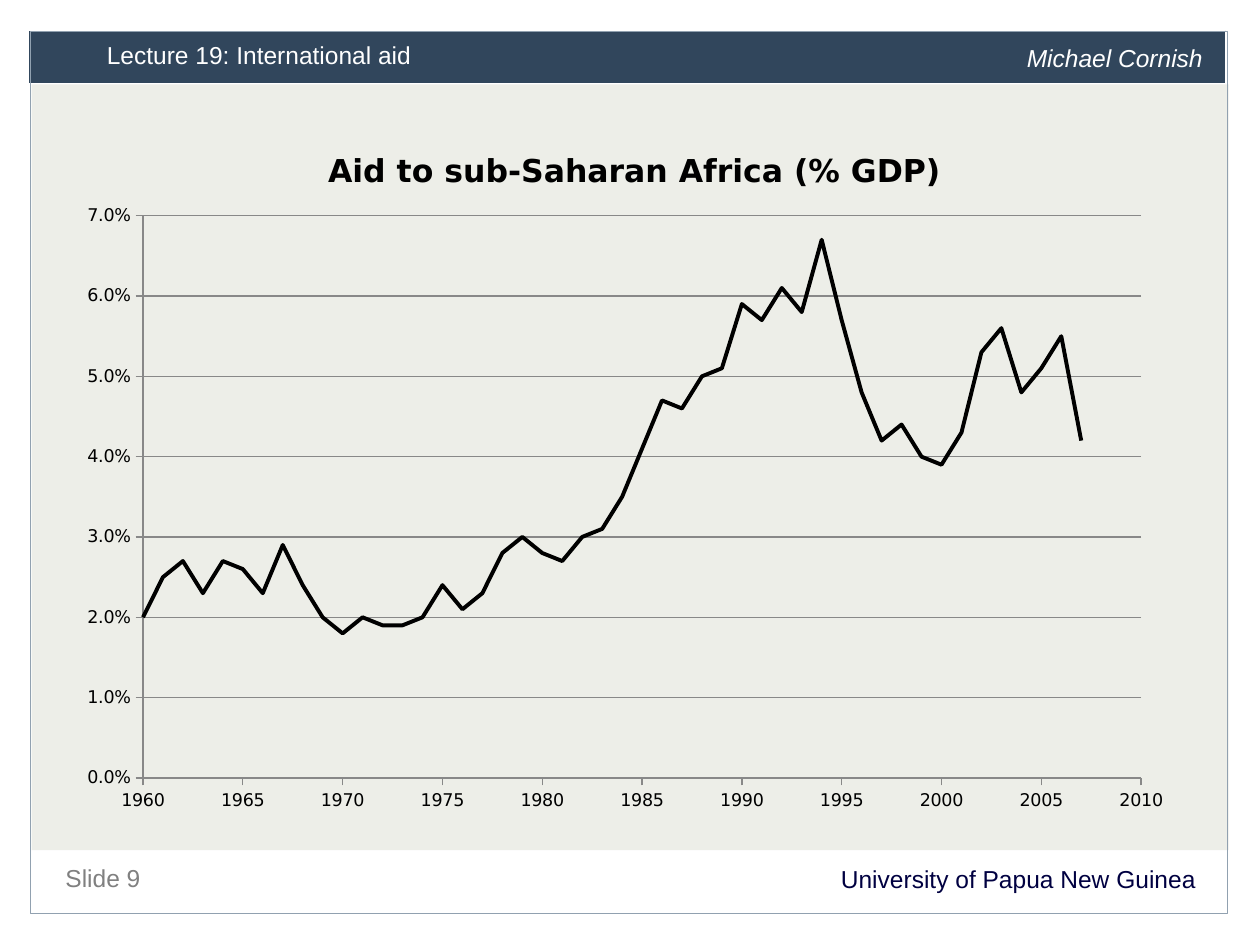
from lxml import etree
from pptx import Presentation
from pptx import util as u
from pptx.chart.data import XyChartData
from pptx.dml.color import RGBColor
from pptx.enum import chart as charts, shapes, text
from pptx.oxml import parse_xml
from pptx.oxml.ns import nsdecls

COLORS = {"panel": "EDEEE8", "band": "31465C", "frame": "91A1B0", "white": "FFFFFF",
          "navy": "000041", "grey": "808080", "grid": "888888", "black": "000000"}
COLORS = {name: RGBColor.from_string(value) for name, value in COLORS.items()}


def write_label(shape, wording, color, spacing, align=text.PP_ALIGN.LEFT, italic=False):
    frame = shape.text_frame
    frame.word_wrap = True
    frame.auto_size = text.MSO_AUTO_SIZE.NONE
    frame.vertical_anchor = text.MSO_ANCHOR.TOP
    paragraph = frame.paragraphs[0]
    paragraph.alignment = align
    paragraph.line_spacing = u.Pt(spacing)
    paragraph.space_before = u.Pt(0)
    run = paragraph.add_run()
    run.text = wording
    run.font.name, run.font.size = "Arial", u.Pt(14)
    run.font.italic = italic
    run.font.color.rgb = COLORS[color]


def place_inside(parent, position, inner=False, **fractions):
    """Give a chart title or plot area a manual layout."""
    for old in parent.findall("{*}layout"):
        parent.remove(old)
    target = '<c:layoutTarget val="inner"/>' if inner else ""
    modes = '<c:xMode val="edge"/><c:yMode val="edge"/>'
    values = "".join(f'<c:{key} val="{value}"/>' for key, value in fractions.items())
    parent.insert(position, parse_xml(
        f'<c:layout {nsdecls("c")}><c:manualLayout>{target}{modes}{values}'
        '</c:manualLayout></c:layout>'))


presentation = Presentation()
presentation.slide_width, presentation.slide_height = u.Cm(25.4), u.Cm(19.05)
slide = presentation.slides.add_slide(presentation.slide_layouts[5])

# Panel, header band and frame
for box, fill, line, width in [
    ((0.64, 1.7, 24.13, 15.44), "panel", None, 0),
    ((0.58, 0.61, 24.13, 1.07), "band", "white", 0.5),
    ((0.61, 0.64, 24.13, 17.78), None, "frame", 0.75),
]:
    shape = slide.shapes.add_shape(shapes.MSO_SHAPE.RECTANGLE, *map(u.Cm, box))
    shape.shadow.inherit = False
    if fill:
        shape.fill.solid()
        shape.fill.fore_color.rgb = COLORS[fill]
    else:
        shape.fill.background()
    if line:
        shape.line.color.rgb = COLORS[line]
        shape.line.width = u.Pt(width)
    else:
        shape.line.fill.background()

# Lecture title, brought in front of the band
title = slide.shapes.title
title.left, title.top, title.width, title.height = map(u.Cm, (1.9, 0.64, 15.57, 0.94))
write_label(title, "Lecture 19: International aid", "white", 18)
title.element.getparent().append(title.element)

# Lecturer and footer labels
for box, wording, color, spacing, align, italic in [
    ((20.45, 0.71, 4.17, 0.94), "Michael Cornish", "white", 18, text.PP_ALIGN.LEFT, True),
    ((1.07, 17.15, 11, 0.86), "Slide 9", "grey", 20, text.PP_ALIGN.LEFT, False),
    ((1.07, 17.35, 23.29, 0.81), "University of Papua New Guinea", "navy", 15,
     text.PP_ALIGN.RIGHT, False),
]:
    label = slide.shapes.add_textbox(*map(u.Cm, box))
    write_label(label, wording, color, spacing, align, italic)

# Aid as a share of GDP, yearly from 1960
aid_percent = [
    2.0, 2.5, 2.7, 2.3, 2.7, 2.6, 2.3, 2.9, 2.4, 2.0,
    1.8, 2.0, 1.9, 1.9, 2.0, 2.4, 2.1, 2.3, 2.8, 3.0,
    2.8, 2.7, 3.0, 3.1, 3.5, 4.1, 4.7, 4.6, 5.0, 5.1,
    5.9, 5.7, 6.1, 5.8, 6.7, 5.7, 4.8, 4.2, 4.4, 4.0,
    3.9, 4.3, 5.3, 5.6, 4.8, 5.1, 5.5, 4.2]
data = XyChartData()
aid = data.add_series("Series 1")
for year, percent in enumerate(aid_percent, start=1960):
    aid.add_data_point(year, round(percent / 100, 3))

chart = slide.shapes.add_chart(
    charts.XL_CHART_TYPE.XY_SCATTER_SMOOTH_NO_MARKERS,
    *map(u.Cm, (1.3, 2.34, 22.61, 14.35)), data).chart
chart.has_legend = False
chart.font.name, chart.font.size = "DejaVu Sans", u.Pt(10)
chart.font.color.rgb = COLORS["black"]
chart.plots[0].vary_by_categories = False

# Chart title and plot area
chart.has_title = True
run = chart.chart_title.text_frame.paragraphs[0].add_run()
run.text = "Aid to sub-Saharan Africa (% GDP)"
run.font.name, run.font.size, run.font.bold = "DejaVu Sans", u.Pt(18), True
run.font.color.rgb = COLORS["black"]
chart.chart_title.include_in_layout = False
chart_title = chart.chart_title.format and chart.element.find(".//{*}title")
place_inside(chart_title, 1, x=0.23, y=0.04)
place_inside(chart.element.find(".//{*}plotArea"), 0, inner=True,
             x=0.07, y=0.14, w=0.89, h=0.79)

# Aid line
series = chart.plots[0].series[0]
series.smooth = True
series.marker.style = charts.XL_MARKER_STYLE.NONE
series.format.line.color.rgb = COLORS["black"]
series.format.line.width = u.Pt(2.25)

# Axes
for axis, low, high, step, number_format in [
    (chart.category_axis, 1960, 2010, 5, "0"),
    (chart.value_axis, 0, 0.07, 0.01, "0.0%"),
]:
    axis.minimum_scale, axis.maximum_scale, axis.major_unit = low, high, step
    axis.major_tick_mark = charts.XL_TICK_MARK.OUTSIDE
    axis.minor_tick_mark = charts.XL_TICK_MARK.NONE
    axis.tick_labels.number_format = number_format
    axis.tick_labels.number_format_is_linked = False
    axis.format.line.color.rgb = COLORS["grid"]
    axis.format.line.width = u.Pt(0.75)
chart.category_axis.has_major_gridlines = False
chart.value_axis.has_major_gridlines = True
gridline = chart.value_axis.major_gridlines.format.line
gridline.color.rgb = COLORS["grid"]
gridline.width = u.Pt(0.75)

presentation.save("out.pptx")
